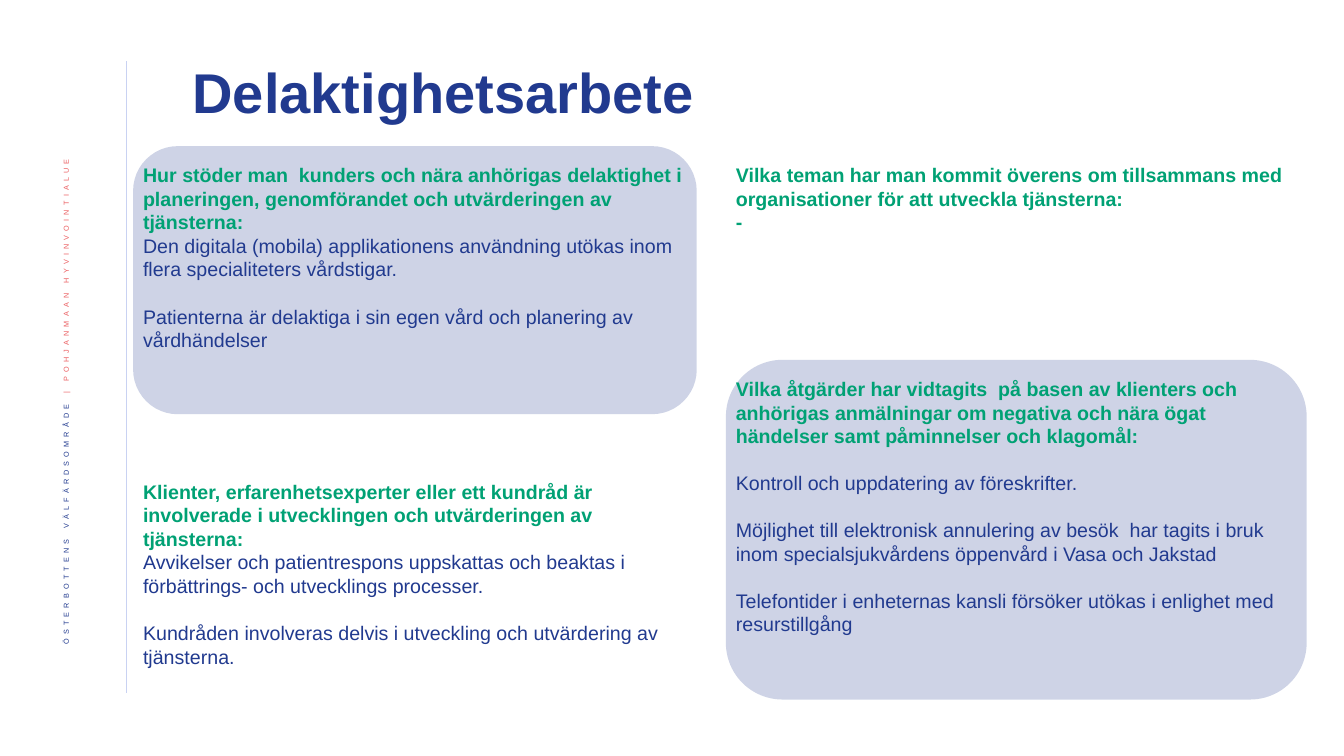
from lxml import etree
from pptx import Presentation
from pptx.dml.color import RGBColor
from pptx.enum import shapes, text
from pptx.oxml.ns import qn
from pptx.util import Inches, Pt

COLORS = {"navy": "213A8F", "green": "00A174", "coral": "EB5C5F", "rule": "C9D2F2"}
FONT = "Arial"
BODY_SIZE = 14
LINE_GAP = 16.8

TITLE = "Delaktighetsarbete"
SIDEBAR = [
    ("ÖSTERBOTTENS VÄLFÄRDSOMRÅDE ", "navy"),
    ("| POHJANMAAN HYVINVOINTIALUE ", "coral"),
]

LEFT_COLUMN = (1.32, 5.59)
RIGHT_COLUMN = (7.2, 5.76)
TEXT_OFFSET = 0.12

TOPICS = [
    {
        "column": LEFT_COLUMN, "top": 1.45, "text_height": 2.22, "panel_height": 2.66,
        "question": "Hur stöder man  kunders och nära anhörigas delaktighet i planeringen, "
                    "genomförandet och utvärderingen av tjänsterna:",
        "answers": [
            ("Den digitala (mobila) applikationens användning utökas inom flera "
             "specialiteters vårdstigar.", 0),
            ("Patienterna är delaktiga i sin egen vård och planering av vårdhändelser", LINE_GAP),
        ],
    },
    {
        "column": RIGHT_COLUMN, "top": 1.45, "text_height": 0.81, "panel_height": None,
        "question": "Vilka teman har man kommit överens om tillsammans med organisationer "
                    "för att utveckla tjänsterna:",
        "answers": [("-", 0)],
        "answer_style": ("green", True),
    },
    {
        "column": LEFT_COLUMN, "top": 4.59, "text_height": 1.99, "panel_height": None,
        "question": "Klienter, erfarenhetsexperter eller ett kundråd är involverade i "
                    "utvecklingen och utvärderingen av tjänsterna:",
        "answers": [
            ("Avvikelser och patientrespons uppskattas och beaktas i förbättrings- och "
             "utvecklings processer.", 0),
            ("Kundråden involveras delvis i utveckling och utvärdering av tjänsterna.", LINE_GAP),
        ],
    },
    {
        "column": RIGHT_COLUMN, "top": 3.57, "text_height": 2.93, "panel_height": 3.37,
        "question": "Vilka åtgärder har vidtagits  på basen av klienters och anhörigas anmälningar "
                    "om negativa och nära ögat händelser samt påminnelser och klagomål:",
        "answers": [
            ("Kontroll och uppdatering av föreskrifter.", LINE_GAP),
            ("Möjlighet till elektronisk annulering av besök  har tagits i bruk inom "
             "specialsjukvårdens öppenvård i Vasa och Jakstad", LINE_GAP),
            ("Telefontider i enheternas kansli försöker utökas i enlighet med resurstillgång",
             LINE_GAP),
        ],
    },
]


def rgb(name):
    return RGBColor.from_string(COLORS[name])


def add_run(paragraph, words, size, color, bold=False):
    run = paragraph.add_run()
    run.text = words
    run.font.name = FONT
    run.font.size = Pt(size)
    run.font.bold = bold
    run.font.color.rgb = rgb(color)
    return run


def add_panel(slide, left, top, width, height):
    panel = slide.shapes.add_shape(
        shapes.MSO_SHAPE.ROUNDED_RECTANGLE,
        Inches(left), Inches(top), Inches(width), Inches(height))
    panel.shadow.inherit = False
    panel.fill.solid()
    panel.fill.fore_color.rgb = rgb("navy")
    panel.line.fill.background()
    tint = panel.fill._xPr.find(".//" + qn("a:srgbClr"))
    etree.SubElement(tint, qn("a:alpha")).set("val", "22000")


def add_topic(slide, topic):
    left, width = topic["column"]
    if topic["panel_height"]:
        add_panel(slide, left, topic["top"], width, topic["panel_height"])
    box = slide.shapes.add_textbox(
        Inches(left), Inches(topic["top"] + TEXT_OFFSET),
        Inches(width), Inches(topic["text_height"]))
    frame = box.text_frame
    frame.word_wrap = True
    add_run(frame.paragraphs[0], topic["question"], BODY_SIZE, "green", True)
    color, bold = topic.get("answer_style", ("navy", False))
    for answer, gap in topic["answers"]:
        paragraph = frame.add_paragraph()
        paragraph.space_before = Pt(gap)
        add_run(paragraph, answer, BODY_SIZE, color, bold)


def add_sidebar(slide):
    rule = slide.shapes.add_connector(
        shapes.MSO_CONNECTOR.STRAIGHT, Inches(1.25), Inches(0.61), Inches(1.25), Inches(6.88))
    rule.line.color.rgb = rgb("rule")
    rule.line.width = Pt(0.5)
    etree.SubElement(rule._element.spPr, qn("a:effectLst"))

    box = slide.shapes.add_textbox(Inches(0.42), Inches(1.42), Inches(0.52), Inches(5.73))
    frame = box.text_frame
    frame.word_wrap = True
    frame.vertical_anchor = text.MSO_ANCHOR.MIDDLE
    frame._txBody.bodyPr.set("vert", "vert270")
    paragraph = frame.paragraphs[0]
    paragraph.alignment = text.PP_ALIGN.RIGHT
    paragraph.line_spacing = 0.9
    for words, color in SIDEBAR:
        properties = add_run(paragraph, words, 9, color).font._element
        properties.set("baseline", "30000")
        properties.set("spc", "300")


def main():
    deck = Presentation()
    deck.slide_width, deck.slide_height = Inches(13.33), Inches(7.5)
    slide = deck.slides.add_slide(deck.slide_layouts[5])
    add_sidebar(slide)

    title = slide.shapes.title
    title.left, title.top = Inches(1.81), Inches(0.45)
    title.width, title.height = Inches(9.98), Inches(0.99)
    title.text_frame.vertical_anchor = text.MSO_ANCHOR.MIDDLE
    heading = title.text_frame.paragraphs[0]
    heading.alignment = text.PP_ALIGN.LEFT
    heading.line_spacing = 0.9
    add_run(heading, TITLE, 40, "navy", True)

    for topic in TOPICS:
        add_topic(slide, topic)
    deck.save("out.pptx")


if __name__ == "__main__":
    main()
